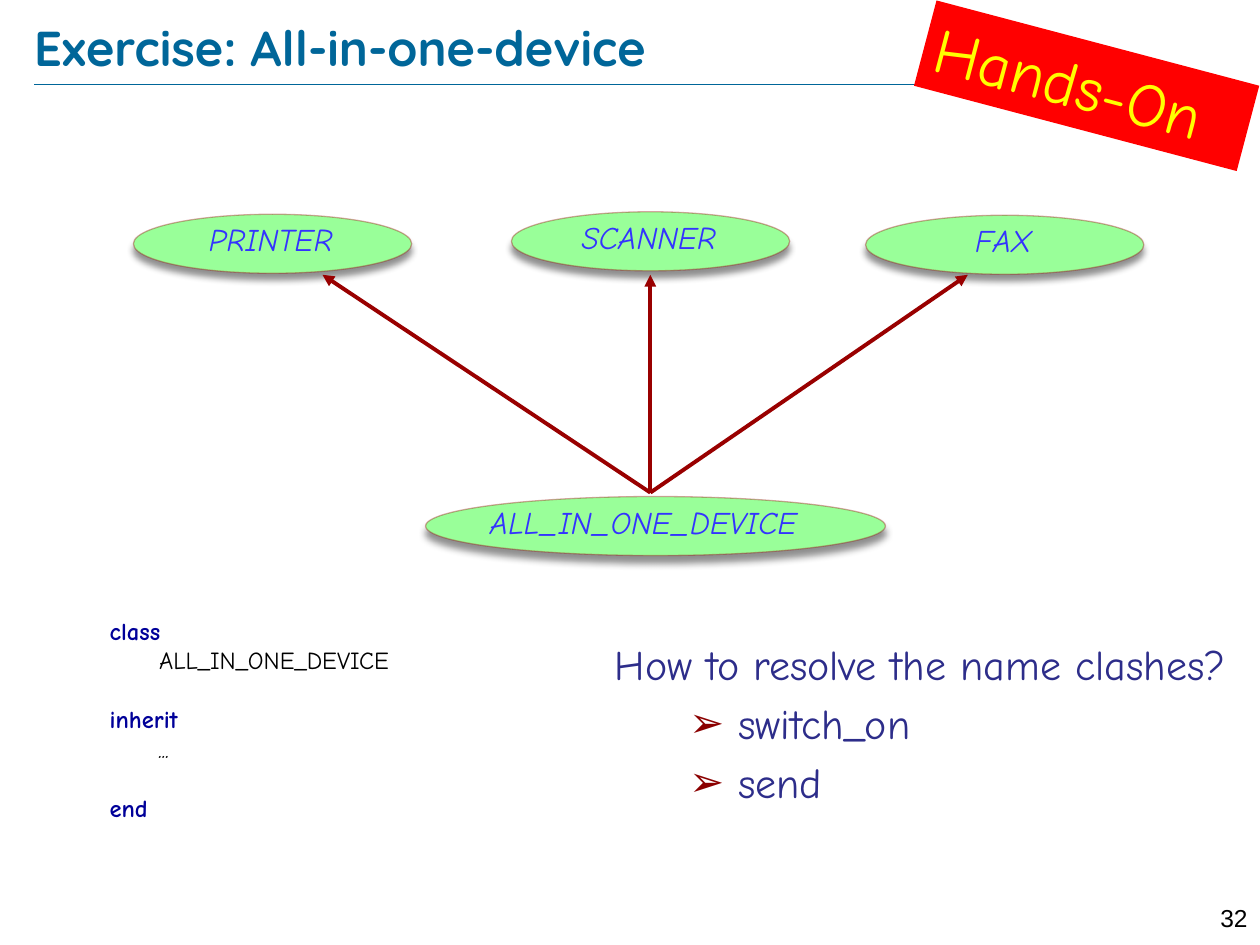
from lxml import etree
from pptx import Presentation
from pptx.dml.color import RGBColor
from pptx.enum.shapes import MSO_CONNECTOR, MSO_SHAPE
from pptx.enum.text import MSO_ANCHOR, PP_ALIGN
from pptx.oxml.ns import qn
from pptx.util import Cm, Pt

LINE = MSO_CONNECTOR.STRAIGHT
OVAL, RECT = MSO_SHAPE.OVAL, MSO_SHAPE.RECTANGLE
TOP, MIDDLE = MSO_ANCHOR.TOP, MSO_ANCHOR.MIDDLE
LEFT, CENTER, RIGHT = PP_ALIGN.LEFT, PP_ALIGN.CENTER, PP_ALIGN.RIGHT

TEAL = RGBColor(0x00, 0x66, 0x99)
GREEN = RGBColor(0x99, 0xFF, 0x99)
MAROON = RGBColor(0x99, 0x00, 0x00)
BLUE = RGBColor(0x33, 0x33, 0xFF)
NAVY = RGBColor(0x00, 0x00, 0x99)
INDIGO = RGBColor(0x2D, 0x2D, 0x8A)
RED = RGBColor(0xFF, 0x00, 0x00)
YELLOW = RGBColor(0xFF, 0xFF, 0x00)
BLACK = RGBColor(0x00, 0x00, 0x00)
HAND = "Comic Neue"


def add(parent, tag, **attrs):
    return etree.SubElement(parent, qn(tag), attrs)


def place(shape, x, y, w, h):
    shape.left, shape.top, shape.width, shape.height = map(Cm, (x, y, w, h))


def style(para, size, color, name=HAND, bold=False, italic=False, align=LEFT):
    para.alignment = align
    font = para.font
    font.name, font.size = name, Pt(size)
    font.bold, font.italic = bold, italic
    font.color.rgb = color


def text_box(slide, x, y, w, h):
    frame = slide.shapes.add_textbox(Cm(x), Cm(y), Cm(w), Cm(h)).text_frame
    frame.word_wrap = True
    return frame


def add_line(slide, start, end, color, width):
    line = slide.shapes.add_connector(LINE, *map(Cm, start + end))
    line.line.color.rgb = color
    line.line.width = Pt(width)
    add(line._element.spPr, "a:effectLst")
    return line


def add_head(slide, x, y, w, h):
    """Title with a thin rule below it."""
    title = slide.shapes.title
    place(title, x, y, w, h)
    frame = title.text_frame
    frame.margin_left = frame.margin_right = 0
    frame.margin_top = frame.margin_bottom = 0
    frame.vertical_anchor = MIDDLE
    frame.text = "Exercise: All-in-one-device"
    style(frame.paragraphs[0], 28, TEAL, "Quicksand", bold=True)
    rule = y + h + 0.15
    add_line(slide, (x, rule), (x + 20.01, rule), TEAL, 0.25)


def add_class(slide, name, x, y, w, pad, span):
    """Class ellipse, its label inset by pad and span wide."""
    oval = slide.shapes.add_shape(OVAL, Cm(x), Cm(y), Cm(w), Cm(1.19))
    oval.fill.solid()
    oval.fill.fore_color.rgb = GREEN
    oval.line.color.rgb = MAROON
    oval.line.width = Pt(0.75)
    props = oval._element.spPr
    tint = props.find(".//" + qn("a:ln")).find(".//" + qn("a:srgbClr"))
    add(tint, "a:alpha", val="34000")
    oval.shadow.inherit = False
    shade = add(props.find(qn("a:effectLst")), "a:outerShdw",
                blurRad=str(Pt(4)), dist=str(Pt(4)), dir="5400000",
                rotWithShape="0")
    add(add(shade, "a:srgbClr", val="000000"), "a:alpha", val="43000")

    frame = text_box(slide, x + pad, y, span, 1.02)
    frame.text = name
    style(frame.paragraphs[0], 18, BLUE, italic=True, align=CENTER)


def add_tree(slide, x, y):
    """Parent classes above the class that inherits from them."""
    parents = [("PRINTER", 0, 0.05), ("SCANNER", 7.62, 0), ("FAX", 14.76, 0.07)]
    for name, dx, dy in parents:
        add_class(slide, name, x + dx, y + dy, 5.61, 0.94, 3.66)
    add_class(slide, "ALL_IN_ONE_DEVICE", x + 5.89, y + 5.74, 9.27, 0.43, 7.92)
    for dx in (10.42, 3.81, 16.82):
        arrow = add_line(slide, (x + 10.42, y + 5.66), (x + dx, y + 1.27),
                         MAROON, 2.25)
        add(arrow.line._get_or_add_ln(), "a:tailEnd", type="triangle")


def add_badge(slide, x, y, w, h):
    badge = slide.shapes.add_shape(RECT, Cm(x), Cm(y), Cm(w), Cm(h))
    badge.rotation = 14.8
    badge.shadow.inherit = False
    badge.fill.solid()
    badge.fill.fore_color.rgb = RED
    badge.line.fill.background()
    frame = badge.text_frame
    frame.vertical_anchor = TOP
    frame.text = "Hands-On"
    style(frame.paragraphs[0], 36, YELLOW)


def add_code(slide, x, y, w, h):
    frame = text_box(slide, x, y, w, h)
    frame.text = "class\nALL_IN_ONE_DEVICE\ninherit\n...\nend"
    for i, para in enumerate(frame.paragraphs):
        key = i % 2 == 0
        if not key:
            para._p.get_or_add_pPr().set("marL", str(Cm(1)))
        elif i:
            para.space_before = Pt(17)
        style(para, 14, NAVY if key else BLACK, bold=key,
              italic=para.text == "...")


def add_body(slide, x, y, w, h):
    """Question with its bulleted items."""
    body = slide.placeholders[1]
    place(body, x, y, w, h)
    frame = body.text_frame
    frame.text = "How to resolve the name clashes?\nswitch_on\nsend"
    for i, para in enumerate(frame.paragraphs):
        props = para._p.get_or_add_pPr()
        if i:
            para.level = 1
            props.set("marL", str(Cm(2.49)))
            props.set("indent", str(Cm(-0.99)))
            add(add(props, "a:buClr"), "a:srgbClr", val="8B0000")
            add(props, "a:buChar", char="➢")
        else:
            props.set("marL", "0")
            props.set("indent", "0")
            add(props, "a:buNone")
        para.space_before = Pt(4.8 if i else 0)
        style(para, 24, INDIGO)


def add_number(slide, x, y, w, h):
    frame = text_box(slide, x, y, w, h)
    frame.vertical_anchor = MIDDLE
    frame.text = "32"
    style(frame.paragraphs[0], 14, BLACK, "Arial", align=RIGHT)


def main():
    deck = Presentation()
    deck.slide_width, deck.slide_height = Cm(25.4), Cm(19.05)
    slide = deck.slides.add_slide(deck.slide_layouts[1])
    add_head(slide, 0.69, 0.33, 23.8, 1.22)
    add_tree(slide, 2.69, 4.27)
    add_badge(slide, 18.54, 0.84, 6.73, 1.78)
    add_code(slide, 1.96, 12.29, 8.13, 4.45)
    add_body(slide, 12.14, 12.75, 13.26, 5.49)
    add_number(slide, 24, 18.19, 1.4, 0.61)
    deck.save("out.pptx")


if __name__ == "__main__":
    main()
